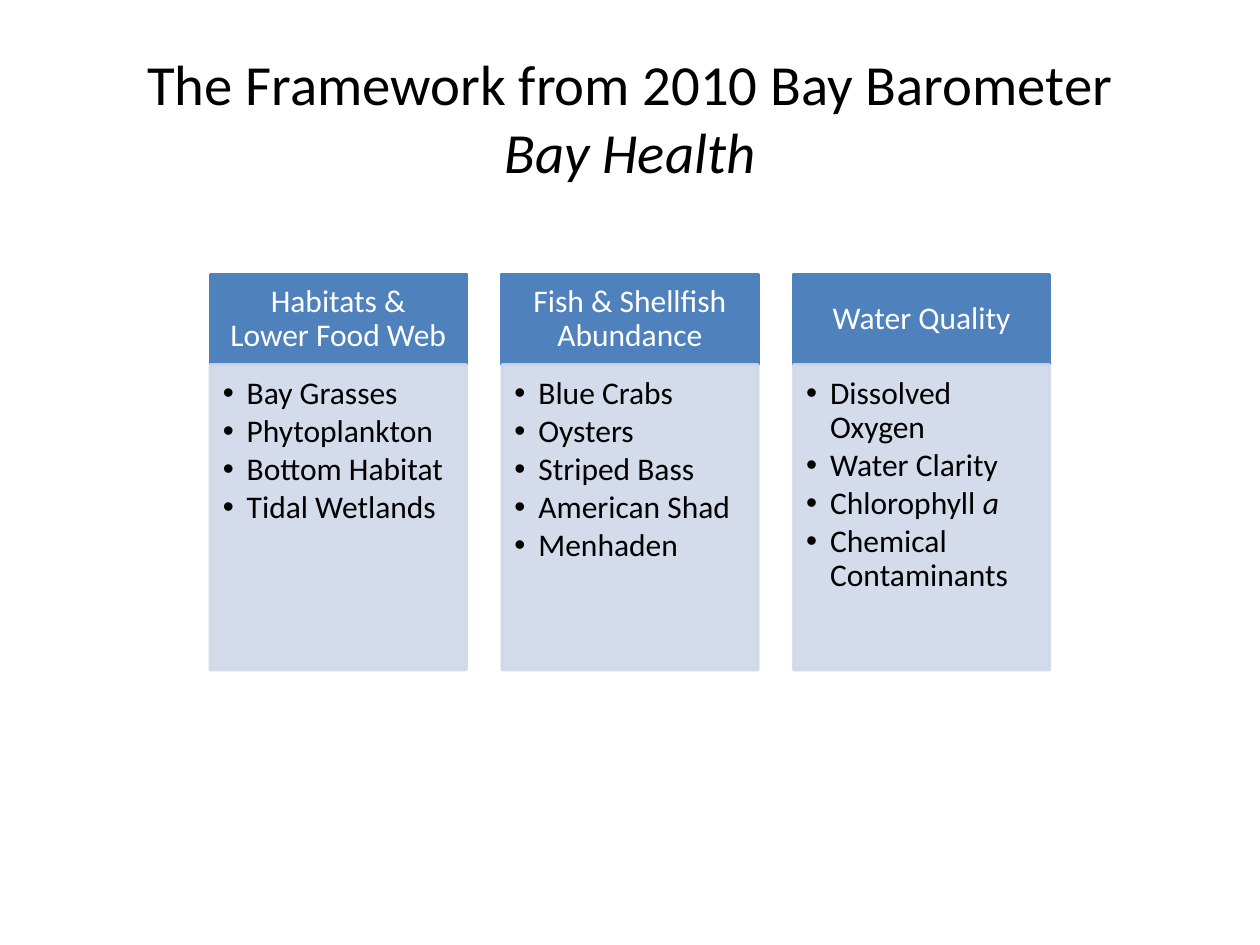
from dataclasses import dataclass

from lxml import etree
from pptx import Presentation
from pptx.dml.color import RGBColor
from pptx.enum.shapes import MSO_SHAPE
from pptx.enum.text import MSO_ANCHOR, MSO_AUTO_SIZE, PP_ALIGN
from pptx.oxml.ns import qn
from pptx.util import Inches, Pt


@dataclass(frozen=True)
class Theme:
    font: str = "Calibri"
    title_size: float = 32.4
    body_size: float = 18
    text: str = "000000"
    inverse: str = "FFFFFF"
    header: str = "4F81BD"
    panel: str = "D0D8E8"
    panel_alpha: int = 90
    line_width: float = 2


@dataclass(frozen=True)
class Grid:
    """Equal columns, centred across the slide, in inches."""
    slide_width: float = 10
    slide_height: float = 7.5
    columns: int = 3
    column_width: float = 2.03
    gap: float = 0.285
    top: float = 2.18
    header_height: float = 0.715
    panel_height: float = 2.42

    def left(self, col):
        used = self.columns * (self.column_width + self.gap) - self.gap
        return (self.slide_width - used) / 2 + col * (self.column_width + self.gap)


class SlideBuilder:
    def __init__(self, prs, theme, grid):
        self.theme, self.grid = theme, grid
        self.s = prs.slides.add_slide(prs.slide_layouts[5])

    def set_format(self, target, values):
        for name, value in values.items():
            setattr(target, name, value)

    def add_runs(self, p, parts, size, color):
        """Each part is a text and whether it is italic."""
        for text, italic in parts:
            r = p.add_run()
            r.text = text
            self.set_format(r.font, {"name": self.theme.font, "size": Pt(size),
                                     "italic": italic or None})
            r.font.color.rgb = RGBColor.from_string(color)

    def title(self, first, second):
        sp = self.s.shapes.title
        self.set_format(sp, {"left": Inches(0.5), "top": Inches(0.3),
                             "width": Inches(9), "height": Inches(1.25)})
        self.set_format(sp.text_frame, {"vertical_anchor": MSO_ANCHOR.MIDDLE,
                                        "auto_size": MSO_AUTO_SIZE.NONE})
        p = sp.text_frame.paragraphs[0]
        p.alignment = PP_ALIGN.CENTER
        self.add_runs(p, [(first, False)], self.theme.title_size, self.theme.text)
        p.add_line_break()
        self.add_runs(p, [(second, True)], self.theme.title_size, self.theme.text)

    def box(self, col, top, height, color, anchor, insets, alpha=None):
        sp = self.s.shapes.add_shape(
            MSO_SHAPE.RECTANGLE, Inches(self.grid.left(col)), Inches(top),
            Inches(self.grid.column_width), Inches(height))
        sp.shadow.inherit = False
        sp.fill.solid()
        sp.line.width = Pt(self.theme.line_width)
        for fill in (sp.fill, sp.line.fill):
            fill.solid()
            fill.fore_color.rgb = RGBColor.from_string(color)
        if alpha:
            for clr in sp.element.spPr.iter(qn("a:srgbClr")):
                etree.SubElement(clr, qn("a:alpha")).set("val", str(alpha * 1000))
        sides = ("margin_left", "margin_top", "margin_right", "margin_bottom")
        self.set_format(sp.text_frame, {"word_wrap": True, "vertical_anchor": anchor,
                                        **dict(zip(sides, map(Inches, insets)))})
        return sp.text_frame

    def header(self, col, text):
        tf = self.box(col, self.grid.top, self.grid.header_height, self.theme.header,
                      MSO_ANCHOR.MIDDLE, (0.14, 0.08, 0.14, 0.08))
        p = tf.paragraphs[0]
        self.set_format(p, {"alignment": PP_ALIGN.CENTER, "line_spacing": 0.9})
        self.add_runs(p, [(text, False)], self.theme.body_size, self.theme.inverse)

    def bullet_panel(self, col, items):
        tf = self.box(col, self.grid.top + self.grid.header_height,
                      self.grid.panel_height, self.theme.panel, MSO_ANCHOR.TOP,
                      (0.1, 0.1, 0.14, 0.16), self.theme.panel_alpha)
        for i, parts in enumerate(items):
            p = tf.add_paragraph() if i else tf.paragraphs[0]
            self.set_format(p, {"alignment": PP_ALIGN.LEFT, "level": 1,
                                "line_spacing": 0.9, "space_after": Pt(2.3)})
            self.add_bullet(p)
            self.add_runs(p, parts, self.theme.body_size, self.theme.text)

    def add_bullet(self, p):
        pPr = p._p.get_or_add_pPr()
        indent = Inches(0.19)
        pPr.set("marL", str(indent))
        pPr.set("indent", str(-indent))
        etree.SubElement(pPr, qn("a:buFont")).set("typeface", "Arial")
        etree.SubElement(pPr, qn("a:buChar")).set("char", "•")


def plain(*texts):
    return [[(text, False)] for text in texts]


COLUMNS = {
    "Habitats & Lower Food Web": plain(
        "Bay Grasses", "Phytoplankton", "Bottom Habitat", "Tidal Wetlands"),
    "Fish & Shellfish Abundance": plain(
        "Blue Crabs", "Oysters", "Striped Bass", "American Shad", "Menhaden"),
    "Water Quality": [
        *plain("Dissolved Oxygen", "Water Clarity"),
        [("Chlorophyll ", False), ("a", True)],
        *plain("Chemical Contaminants")],
}


def main():
    grid = Grid()
    prs = Presentation()
    prs.slide_width = Inches(grid.slide_width)
    prs.slide_height = Inches(grid.slide_height)
    builder = SlideBuilder(prs, Theme(), grid)

    # Title
    builder.title("The Framework from 2010 Bay Barometer", "Bay Health")

    # Indicator columns
    for col, (heading, items) in enumerate(COLUMNS.items()):
        builder.header(col, heading)
        builder.bullet_panel(col, items)

    prs.save("out.pptx")


if __name__ == "__main__":
    main()
